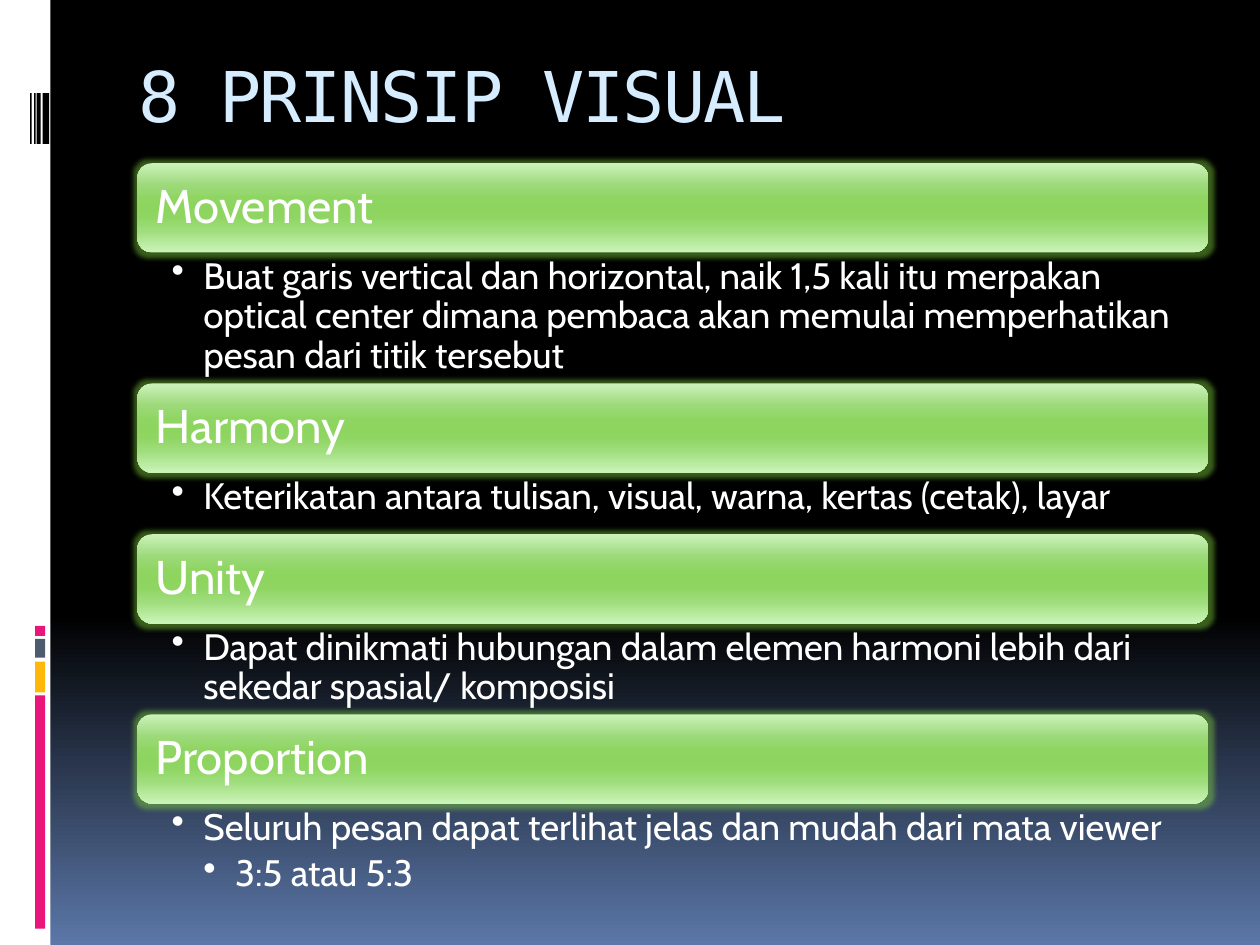
from lxml import etree
from pptx import Presentation
from pptx import util as u
from pptx.dml import color
from pptx.enum import shapes, text
from pptx.oxml import ns

BACKDROP = [(0, "000000"), (65, "000000"), (100, "5B77A8")]
GLOSS = [(0, "CCF2BB"), (25, "9CD979"), (40, "8FD562"), (50, "8DD55F"),
         (60, "8FD562"), (75, "9EDD7B"), (100, "CBF4B9")]
BAR_H = 1.8
PRINCIPLES = [
    ("Movement", 2.64, ["Buat garis vertical dan horizontal, naik 1,5 kali itu merpakan optical "
                        "center dimana pembaca akan memulai memperhatikan pesan dari titik tersebut"]),
    ("Harmony", 1.24, ["Keterikatan antara tulisan, visual, warna, kertas (cetak), layar"]),
    ("Unity", 1.83, ["Dapat dinikmati hubungan dalam elemen harmoni lebih dari sekedar "
                     "spasial/ komposisi"]),
    ("Proportion", 2.0, ["Seluruh pesan dapat terlihat jelas dan mudah dari mata viewer",
                         "3:5 atau 5:3"]),
]


def rgb(value):
    """Turn a hex string into a colour."""
    return color.RGBColor.from_string(value)


def apply(obj, fmt):
    """Set every attribute named in a dict."""
    for name, value in fmt.items():
        setattr(obj, name, value)


def add_node(parent, tag, **attrs):
    """Append a DrawingML element."""
    return etree.SubElement(parent, ns.qn(f"a:{tag}"), attrs)


def set_gradient(fill, root, stops):
    """Fill from top to bottom with any number of colour stops."""
    fill.gradient()
    fill.gradient_angle = 270
    gs_list = next(root.iter(ns.qn("a:gsLst")))
    for gs in list(gs_list):
        gs_list.remove(gs)
    for pos, value in stops:
        add_node(add_node(gs_list, "gs", pos=str(pos * 1000)), "srgbClr", val=value)


def add_box(s, kind, box):
    """Add a preset shape with no line and no shadow."""
    sp = s.shapes.add_shape(kind, *map(u.Cm, box))
    sp.line.fill.background()
    sp.shadow.inherit = False
    return sp


def add_text(s, box, lines, font, margins, anchor=text.MSO_ANCHOR.TOP):
    """Add a wrapped text box and return its paragraphs."""
    tf = s.shapes.add_textbox(*map(u.Cm, box)).text_frame
    sides = ("margin_left", "margin_top", "margin_right", "margin_bottom")
    apply(tf, {"word_wrap": True, "vertical_anchor": anchor,
               **dict(zip(sides, map(u.Cm, margins)))})
    tf.text = "\n".join(lines)
    for p in tf.paragraphs:
        name, size, value = font
        apply(p.runs[0].font, {"name": name, "size": u.Pt(size)})
        p.runs[0].font.color.rgb = rgb(value)
    return tf.paragraphs


def add_sidebar(s, x, y, w, h):
    """Draw the white strip with its barcode and colour blocks."""
    blocks = [(0, 0, w, h, "FFFFFF")]
    blocks += [(0.71, top, 0.2, height, value) for top, height, value in (
        (14.02, 4.7, "EA157A"), (13.34, 0.62, "FEB80A"),
        (12.88, 0.38, "4E5B6F"), (12.62, 0.2, "EA157A"))]
    blocks += [(left, 1.88, width, 1.02, "000000") for left, width in (
        (0.86, 0.13), (0.74, 0.08), (0.69, 0.03), (0.61, 0.03))]
    for left, top, width, height, value in blocks:
        sp = add_box(s, shapes.MSO_SHAPE.RECTANGLE, (x + left, y + top, width, height))
        sp.fill.solid()
        sp.fill.fore_color.rgb = rgb(value)


def add_title(s, x, y, w, h):
    """Write the slide title."""
    p, = add_text(s, (x, y, w, h), ["8 PRINSIP VISUAL"],
                  ("DejaVu Sans Mono", 40, "D6ECFF"), (0.25, 0.24, 0.25, 0.13))
    p.runs[0].font._element.set("spc", "-100")


def add_bar(s, x, y, w, h, label):
    """Draw a glossy glowing bar with its heading."""
    sp = add_box(s, shapes.MSO_SHAPE.ROUNDED_RECTANGLE, (x, y, w, h))
    set_gradient(sp.fill, sp.element, GLOSS)
    effects = next(sp.element.iter(ns.qn("a:effectLst")))
    glow = add_node(add_node(effects, "glow", rad="63500"), "srgbClr", val="7FD13B")
    add_node(glow, "alpha", val="45000")
    inset = 0.09
    p, = add_text(s, (x + inset, y + inset, w - 2 * inset, h - 2 * inset), [label],
                  ("Cabin", 27, "FFFFFF"), (0.28,) * 4, text.MSO_ANCHOR.MIDDLE)
    p.line_spacing = 0.9


def add_details(s, x, y, w, h, lines):
    """Write bullets, each one level deeper than the one before."""
    paragraphs = add_text(s, (x, y, w, h), lines, ("Cabin", 21, "FFFFFF"),
                          (0.69, 0.1, 0.53, 0.1))
    for level, p in enumerate(paragraphs, 1):
        apply(p, {"level": level, "line_spacing": 0.9, "space_after": u.Pt(4)})
        props = p._p.get_or_add_pPr()
        props.set("marL", str(u.Cm(0.64 * level)))
        props.set("indent", str(u.Cm(-0.64)))
        add_node(props, "buChar", char="•")


def add_principles(s, x, y, w):
    """Stack each bar directly above its details."""
    for label, height, lines in PRINCIPLES:
        add_bar(s, x, y, w, BAR_H, label)
        add_details(s, x, y + BAR_H, w, height, lines)
        y += BAR_H + height


def main():
    """Build and save the slide."""
    prs = Presentation()
    apply(prs, {"slide_width": u.Cm(25.4), "slide_height": u.Cm(19.05)})
    s = prs.slides.add_slide(prs.slide_layouts[6])
    set_gradient(s.background.fill, s.element, BACKDROP)
    add_sidebar(s, 0, 0, 1.02, 19.05)
    add_title(s, 2.54, 0.81, 21.59, 2.54)
    add_principles(s, 2.77, 3.29, 21.59)
    prs.save("out.pptx")


if __name__ == "__main__":
    main()
